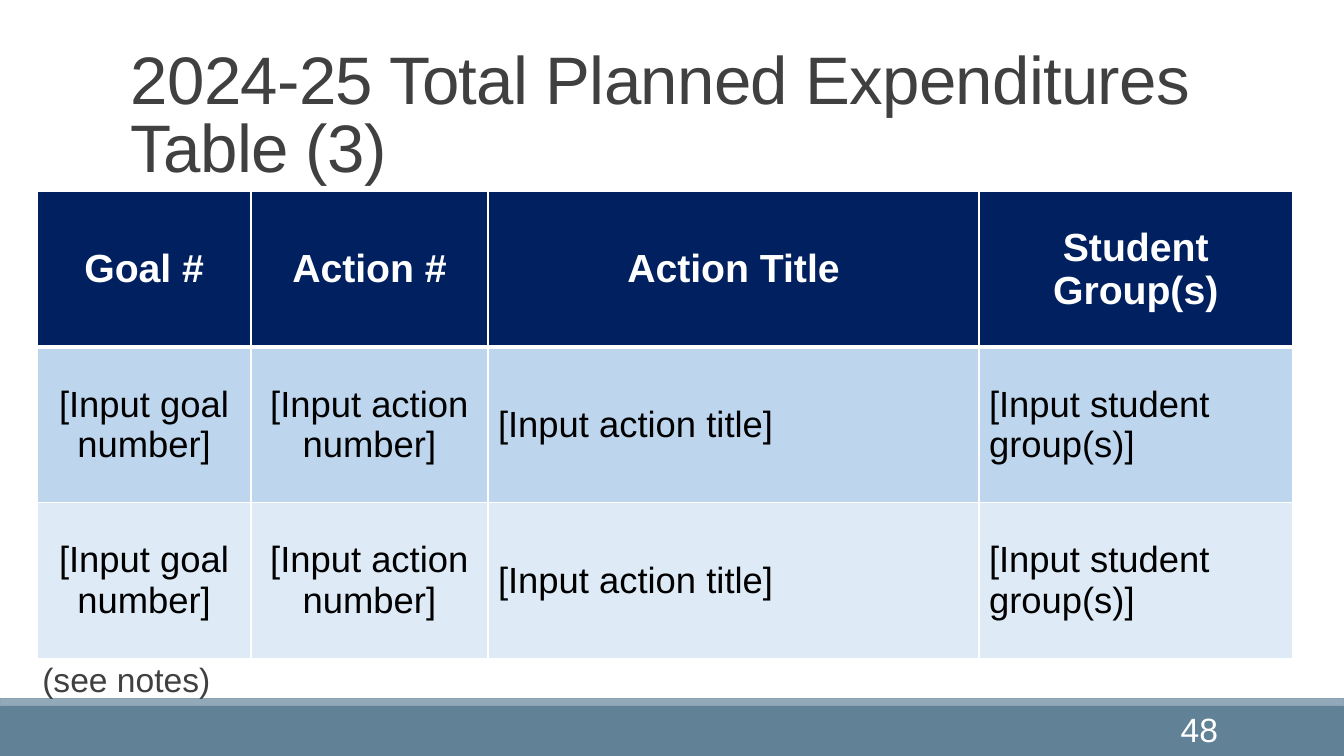
from lxml import etree
from pptx import Presentation
from pptx.dml.color import RGBColor
from pptx.enum.shapes import MSO_SHAPE
from pptx.enum.text import MSO_ANCHOR, PP_ALIGN
from pptx.oxml.ns import qn
from pptx.util import Inches, Pt

RECTANGLE = MSO_SHAPE.RECTANGLE
TOP, MIDDLE, BOTTOM = MSO_ANCHOR.TOP, MSO_ANCHOR.MIDDLE, MSO_ANCHOR.BOTTOM
LEFT, CENTER, RIGHT = PP_ALIGN.LEFT, PP_ALIGN.CENTER, PP_ALIGN.RIGHT

WHITE = RGBColor(0xFF, 0xFF, 0xFF)
BLACK = RGBColor(0x00, 0x00, 0x00)
DARK_GRAY = RGBColor(0x40, 0x40, 0x40)
NAVY = RGBColor(0x00, 0x20, 0x60)
BLUE_BAND = RGBColor(0xBD, 0xD6, 0xEE)
PALE_BAND = RGBColor(0xDE, 0xEB, 0xF6)
FOOTER = RGBColor(0x61, 0x81, 0x97)
STRIPE = RGBColor(0x92, 0xA9, 0xB9)
STRIPE_LINE = RGBColor(0x8F, 0xA3, 0xB6)

FONT = "Arial"
WIDTH, HEIGHT = 13.33, 7.5
COLUMN_WIDTHS = [2.12, 2.35, 4.87, 3.11]
ALIGNMENTS = [CENTER, CENTER, LEFT, LEFT]
HEADERS = ["Goal #", "Action #", "Action Title", "Student Group(s)"]
INPUTS = ["[Input goal number]", "[Input action number]",
          "[Input action title]", "[Input student group(s)]"]


def write(frame, text, size, color, alignment=LEFT, bold=False, spacing=None):
    paragraph = frame.paragraphs[0]
    paragraph.alignment = alignment
    if spacing:
        paragraph.line_spacing = spacing
    run = paragraph.add_run()
    run.text = text
    run.font.name = FONT
    run.font.size = Pt(size)
    run.font.bold = bold
    run.font.color.rgb = color
    return run


def add_text(slide, box, text, size, color, anchor, alignment=LEFT,
             spacing=None, inset=0.1):
    frame = slide.shapes.add_textbox(*map(Inches, box)).text_frame
    frame.word_wrap = True
    frame.vertical_anchor = anchor
    frame.margin_left = frame.margin_right = Inches(inset)
    frame.margin_top = frame.margin_bottom = Inches(0.05)
    return write(frame, text, size, color, alignment, spacing=spacing)


def add_bar(slide, box, color, line_color=None):
    bar = slide.shapes.add_shape(RECTANGLE, *map(Inches, box))
    bar.shadow.inherit = False
    bar.fill.solid()
    bar.fill.fore_color.rgb = color
    if line_color is None:
        bar.line.fill.background()
    else:
        bar.line.color.rgb = line_color
        bar.line.width = Pt(1.25)


def set_borders(cell, top, bottom):
    properties = cell._tc.get_or_add_tcPr()
    for side, points in (("L", 1), ("R", 1), ("T", top), ("B", bottom)):
        line = etree.SubElement(properties, qn(f"a:ln{side}"), w=str(Pt(points)))
        fill = etree.SubElement(line, qn("a:solidFill"))
        etree.SubElement(fill, qn("a:srgbClr"), val=str(WHITE))


def add_title(slide, box):
    run = add_text(slide, box, "2024-25 Total Planned Expenditures Table (3)",
                   48, DARK_GRAY, BOTTOM, spacing=0.85)
    run._r.get_or_add_rPr().set("spc", "-50")


def add_expenditures_table(slide, box):
    rows = [(HEADERS, NAVY), (INPUTS, BLUE_BAND), (INPUTS, PALE_BAND)]
    table = slide.shapes.add_table(len(rows), len(HEADERS),
                                   *map(Inches, box)).table
    for column, width in zip(table.columns, COLUMN_WIDTHS):
        column.width = Inches(width)
    for row_index, (texts, band) in enumerate(rows):
        header = row_index == 0
        for column_index, text in enumerate(texts):
            cell = table.cell(row_index, column_index)
            cell.vertical_anchor = MIDDLE
            set_borders(cell, 3 if row_index == 1 else 1, 3 if header else 1)
            cell.fill.solid()
            cell.fill.fore_color.rgb = band
            if header:
                write(cell.text_frame, text, 28, WHITE, CENTER, bold=True)
            else:
                write(cell.text_frame, text, 26, BLACK,
                      ALIGNMENTS[column_index])


def add_footer(slide, box):
    left, top, width, height = box
    stripe = 0.07
    add_bar(slide, (left, top + stripe, width, height - stripe), FOOTER)
    add_bar(slide, (left, top, width, stripe), STRIPE, STRIPE_LINE)
    add_text(slide, (left + 10.75, top + 0.1, 1.43, 0.4), "48", 24, WHITE,
             MIDDLE, RIGHT)


def main():
    presentation = Presentation()
    presentation.slide_width = Inches(WIDTH)
    presentation.slide_height = Inches(HEIGHT)
    slide = presentation.slides.add_slide(presentation.slide_layouts[6])
    footer_top = 6.93
    add_footer(slide, (0, footer_top, WIDTH, HEIGHT - footer_top))
    add_title(slide, (1.2, 0.31, 11, 1.59))
    add_expenditures_table(slide, (0.37, 1.9, sum(COLUMN_WIDTHS), 4.63))
    add_text(slide, (0.37, 6.53, 5.4, 0.63), "(see notes)", 24, DARK_GRAY,
             TOP, spacing=0.9, inset=0.05)
    presentation.save("out.pptx")


if __name__ == "__main__":
    main()
